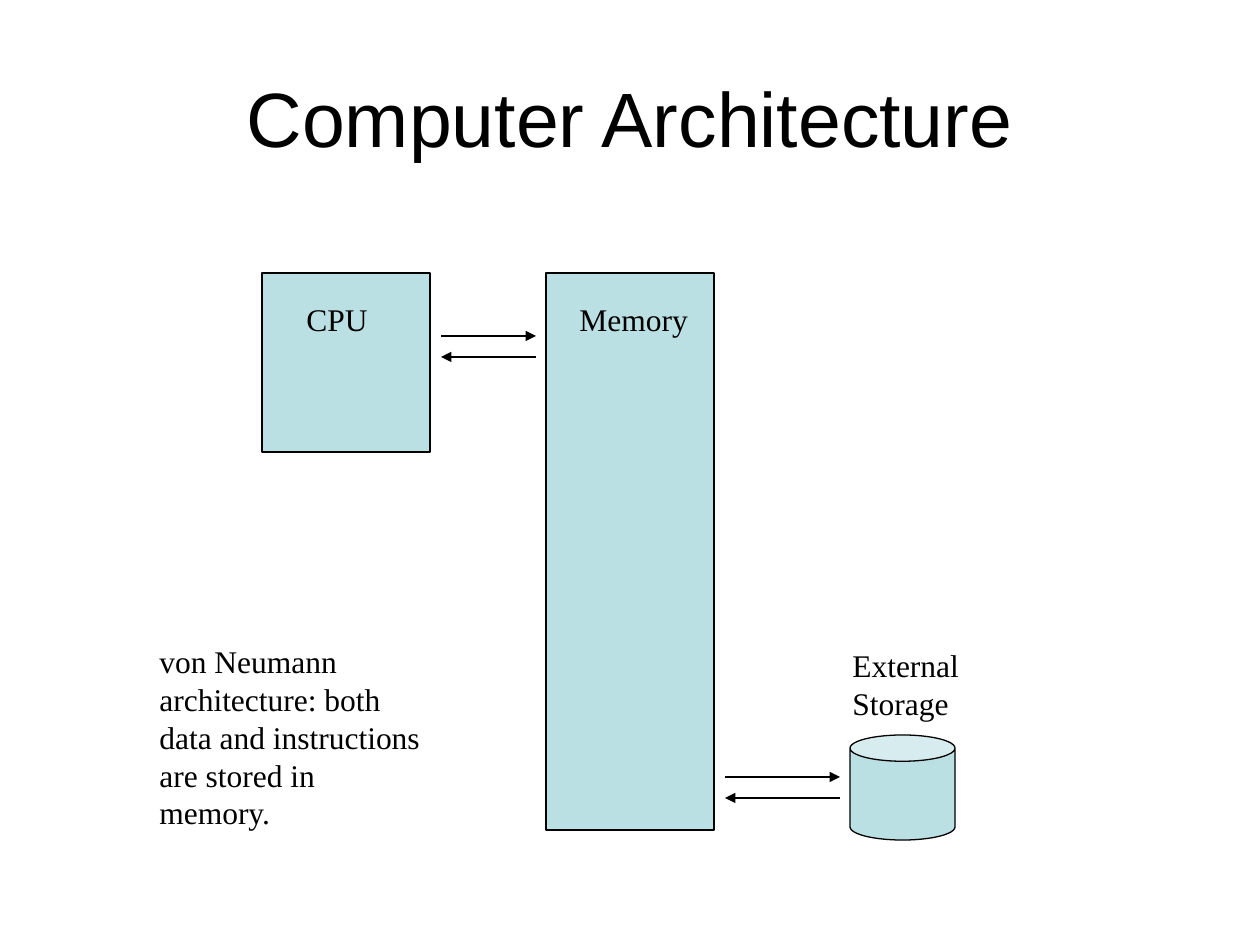
import pptx
import pptx.util
import pptx.dml.color
import pptx.enum.shapes
import pptx.enum.text
import pptx.oxml
import pptx.oxml.ns
import lxml.etree

PX = 914400 / 126
BLACK, TEAL = "000000", "BBE0E3"
SHAPE = pptx.enum.shapes.MSO_SHAPE
ALIGN = pptx.enum.text.PP_ALIGN
ANCHOR = pptx.enum.text.MSO_ANCHOR

title = ("Computer Architecture", (63, 38, 1134, 157))
components = [
    (SHAPE.RECTANGLE, (262, 273, 168, 179)),
    (SHAPE.RECTANGLE, (546, 273, 168, 557)),
    (SHAPE.CAN, (850, 735, 105, 105)),
]
labels = [
    ("CPU", (294, 294, 116, 50)),
    ("Memory", (567, 294, 147, 50)),
    ("External Storage", (840, 640, 168, 88)),
    ("von Neumann architecture: both data and instructions are stored in memory.",
     (147, 636, 294, 204)),
]
exchanges = [(441, 536, 336), (725, 840, 777)]
exchange_gap = 21


def emu(*lengths):
    return [pptx.util.Emu(round(length * PX)) for length in lengths]


def color(value):
    return pptx.dml.color.RGBColor.from_string(value)


def outline(line):
    line.color.rgb = color(BLACK)
    line.width = pptx.util.Pt(0.75)


def add_text(slide, text, box, size, font, align, anchor):
    textbox = slide.shapes.add_textbox(*emu(*box))
    frame = textbox.text_frame
    frame.word_wrap = True
    frame.vertical_anchor = anchor
    frame.text = text
    paragraph = frame.paragraphs[0]
    paragraph.alignment = align
    style = paragraph.runs[0].font
    style.size = pptx.util.Pt(size)
    style.name = font
    style.color.rgb = color(BLACK)


def add_component(slide, kind, box):
    component = slide.shapes.add_shape(kind, *emu(*box))
    component.shadow.inherit = False
    component.fill.solid()
    component.fill.fore_color.rgb = color(TEAL)
    outline(component.line)


def add_arrow(slide, start, end, y):
    arrow = slide.shapes.add_connector(
        pptx.enum.shapes.MSO_CONNECTOR.STRAIGHT, *emu(start, y, end, y))
    outline(arrow.line)
    qn = pptx.oxml.ns.qn
    properties = arrow._element.spPr
    lxml.etree.SubElement(properties.find(qn("a:ln")), qn("a:tailEnd"), type="triangle")
    lxml.etree.SubElement(properties, qn("a:effectLst"))


def main():
    deck = pptx.Presentation()
    deck.slide_width, deck.slide_height = emu(1260, 945)
    slide = deck.slides.add_slide(deck.slide_layouts[6])

    add_text(slide, *title, 44, "Arial", ALIGN.CENTER, ANCHOR.MIDDLE)
    for kind, box in components:
        add_component(slide, kind, box)
    for left, right, y in exchanges:
        add_arrow(slide, left, right, y)
        add_arrow(slide, right, left, y + exchange_gap)
    for text, box in labels:
        add_text(slide, text, box, 18, "Times New Roman", ALIGN.LEFT, ANCHOR.TOP)

    deck.save("out.pptx")


if __name__ == "__main__":
    main()
